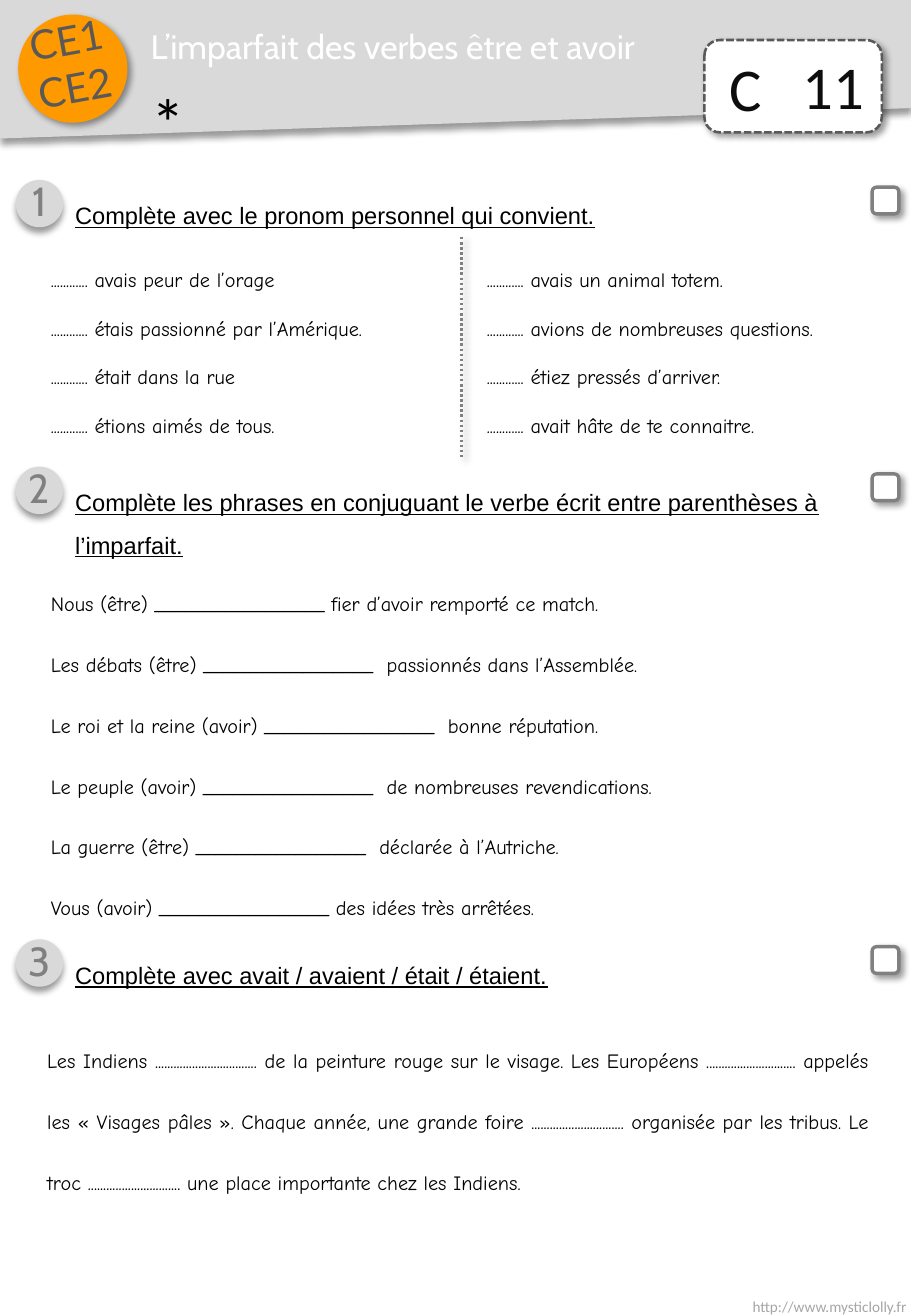
"""Build a French grammar worksheet on the imperfect of être and avoir."""
from lxml import etree
from pptx import Presentation
from pptx.dml.color import RGBColor
from pptx.enum.dml import MSO_LINE
from pptx.enum.shapes import MSO_CONNECTOR, MSO_SHAPE
from pptx.enum.text import MSO_ANCHOR, MSO_AUTO_SIZE, PP_ALIGN
from pptx.oxml.ns import qn
from pptx.util import Inches, Pt

OVAL, ROUNDED = MSO_SHAPE.OVAL, MSO_SHAPE.ROUNDED_RECTANGLE
SYS_DASH, SYS_DOT = MSO_LINE.SQUARE_DOT, MSO_LINE.ROUND_DOT
LEFT, CENTER, RIGHT, JUSTIFY = PP_ALIGN.LEFT, PP_ALIGN.CENTER, PP_ALIGN.RIGHT, PP_ALIGN.JUSTIFY


class Theme:
    white = RGBColor.from_string("FFFFFF")
    black = RGBColor.from_string("000000")
    ink = RGBColor.from_string("0D0D0D")
    dark = RGBColor.from_string("595959")
    mid = RGBColor.from_string("808080")
    footer = RGBColor.from_string("A6A6A6")
    light = RGBColor.from_string("D9D9D9")
    orange = RGBColor.from_string("FF9900")
    plain, head, body, level, instruction = "Calibri", "Cabin", "Comic Neue", "Lato", "Arial"
    star_size, code_size, badge_size, title_size = 40, 36, 24, 20
    instruction_size, body_size, footer_size = 14, 12, 9


def write(sp, text, font, size, color, align=LEFT, spacing=None, underline=None):
    """Fill a shape with text in one format."""
    tf = sp.text_frame
    tf.word_wrap = True
    tf.text = text
    for p in tf.paragraphs:
        p.alignment = align
        p.line_spacing = spacing
        for r in p.runs:
            r.font.name, r.font.size = font, Pt(size)
            r.font.color.rgb, r.font.underline = color, underline


def style(sp, fill=None, line=None, width=0, dash=None, angle=45):
    """Give a shape its fill, line and soft shadow."""
    if fill is not None:
        sp.fill.solid()
        sp.fill.fore_color.rgb = fill
    if line is None:
        sp.line.fill.background()
    else:
        sp.line.color.rgb, sp.line.width = line, Pt(width)
        sp.line.dash_style = dash
    effects = etree.SubElement(sp.element.spPr, qn("a:effectLst"))
    shadow = etree.SubElement(effects, qn("a:outerShdw"), blurRad=str(Pt(4)), dist=str(Pt(3)),
                              dir=str(angle * 60000), algn="t", rotWithShape="0")
    color = etree.SubElement(shadow, qn("a:srgbClr"), val=str(Theme.black))
    etree.SubElement(color, qn("a:alpha"), val="40000")


prs = Presentation()
prs.slide_width, prs.slide_height = Inches(7.5), Inches(10.83)
s = prs.slides.add_slide(prs.slide_layouts[5])

builder = s.shapes.build_freeform(0, 0)
builder.add_line_segments([(Inches(7.5), 0), (Inches(7.5), Inches(0.89)), (0, Inches(1.14))])
band = builder.convert_to_shape()
style(band, Theme.light, angle=90)

title = s.shapes.title
band.element.addnext(title.element)
title.left, title.top, title.width, title.height = Inches(1.14), Inches(0.04), Inches(4.66), Inches(0.67)
write(title, "L’imparfait des verbes être et avoir", Theme.head, Theme.title_size, Theme.white)
title.text_frame.auto_size = MSO_AUTO_SIZE.NONE
title.text_frame.vertical_anchor = MSO_ANCHOR.MIDDLE

code_card = s.shapes.add_shape(ROUNDED, Inches(5.8), Inches(0.33), Inches(1.46), Inches(0.76))
style(code_card, Theme.white, Theme.dark, 1.5, SYS_DASH)
level_disc = s.shapes.add_shape(OVAL, Inches(0.15), Inches(0.12), Inches(0.9), Inches(0.89))
style(level_disc, Theme.orange)

level = s.shapes.add_textbox(Inches(0.13), Inches(0.07), Inches(0.9), Inches(0.91))
level.rotation = 349.6
write(level, "CE1\nCE2", Theme.level, Theme.badge_size, Theme.dark, CENTER)

labels = [
    (5.91, 0.37, 1.46, 0.71, "C", Theme.code_size, Theme.ink, LEFT),
    (6.51, 0.35, 0.91, 0.76, "11", Theme.code_size, Theme.ink, LEFT),
    (1.15, 0.61, 1.26, 0.38, "*", Theme.star_size, Theme.black, LEFT),
    (5.83, 10.63, 1.73, 0.25, "http://www.mysticlolly.fr", Theme.footer_size, Theme.footer, RIGHT),
]
for x, y, w, h, text, size, color, align in labels:
    label = s.shapes.add_textbox(Inches(x), Inches(y), Inches(w), Inches(h))
    write(label, text, Theme.plain, size, color, align)

exercises = [
    (1.48, 0.42, "Complète avec le pronom personnel qui convient."),
    (3.84, 0.81, "Complète les phrases en conjuguant le verbe écrit entre parenthèses à l’imparfait."),
    (7.73, 0.45, "Complète avec avait / avaient / était / étaient."),
]
for number, (y, h, text) in enumerate(exercises, 1):
    parts = s.shapes.add_group_shape().shapes
    disc = parts.add_shape(OVAL, Inches(0.13), Inches(y), Inches(0.39), Inches(0.39))
    style(disc, Theme.light, angle=90)
    digit = parts.add_textbox(Inches(0.13), Inches(y - 0.08), Inches(0.39), Inches(0.5))
    write(digit, str(number), Theme.head, Theme.badge_size, Theme.mid, CENTER)
    instruction = parts.add_textbox(Inches(0.52), Inches(y + 0.01), Inches(6.77), Inches(h))
    write(instruction, text, Theme.instruction, Theme.instruction_size, Theme.black,
          spacing=1.5, underline=True)
    tick_box = parts.add_shape(ROUNDED, Inches(7.18), Inches(y + 0.06), Inches(0.22), Inches(0.22))
    style(tick_box, Theme.white, Theme.mid, 2)

pronouns_left = """............ avais peur de l’orage
............ étais passionné par l’Amérique.
............ était dans la rue
............ étions aimés de tous."""
pronouns_right = """............ avais un animal totem.
............ avions de nombreuses questions.
............ étiez pressés d’arriver.
............ avait hâte de te connaitre."""
sentences = """Nous (être) _________________ fier d’avoir remporté ce match.
Les débats (être) _________________  passionnés dans l’Assemblée.
Le roi et la reine (avoir) _________________  bonne réputation.
Le peuple (avoir) _________________  de nombreuses revendications.
La guerre (être) _________________  déclarée à l’Autriche.
Vous (avoir) _________________ des idées très arrêtées."""
story = (
    "Les Indiens ................................. de la peinture rouge sur le visage. "
    "Les Européens ............................. appelés les « Visages pâles ». "
    "Chaque année, une grande foire .............................. organisée par les tribus. "
    "Le troc .............................. une place importante chez les Indiens."
)
bodies = [
    (0.32, 1.95, 3.58, 1.72, pronouns_left, LEFT, 2.0),
    (3.91, 1.95, 3.5, 1.72, pronouns_right, LEFT, 2.0),
    (0.32, 4.52, 6.97, 3.13, sentences, JUSTIFY, 2.5),
    (0.29, 8.28, 6.97, 2.12, story, JUSTIFY, 2.5),
]
for x, y, w, h, text, align, spacing in bodies:
    body = s.shapes.add_textbox(Inches(x), Inches(y), Inches(w), Inches(h))
    write(body, text, Theme.body, Theme.body_size, Theme.black, align, spacing)

divider = s.shapes.add_connector(MSO_CONNECTOR.STRAIGHT, Inches(3.8), Inches(1.95), Inches(3.8), Inches(3.76))
style(divider, line=Theme.mid, width=1.5, dash=SYS_DOT)

prs.save("out.pptx")
